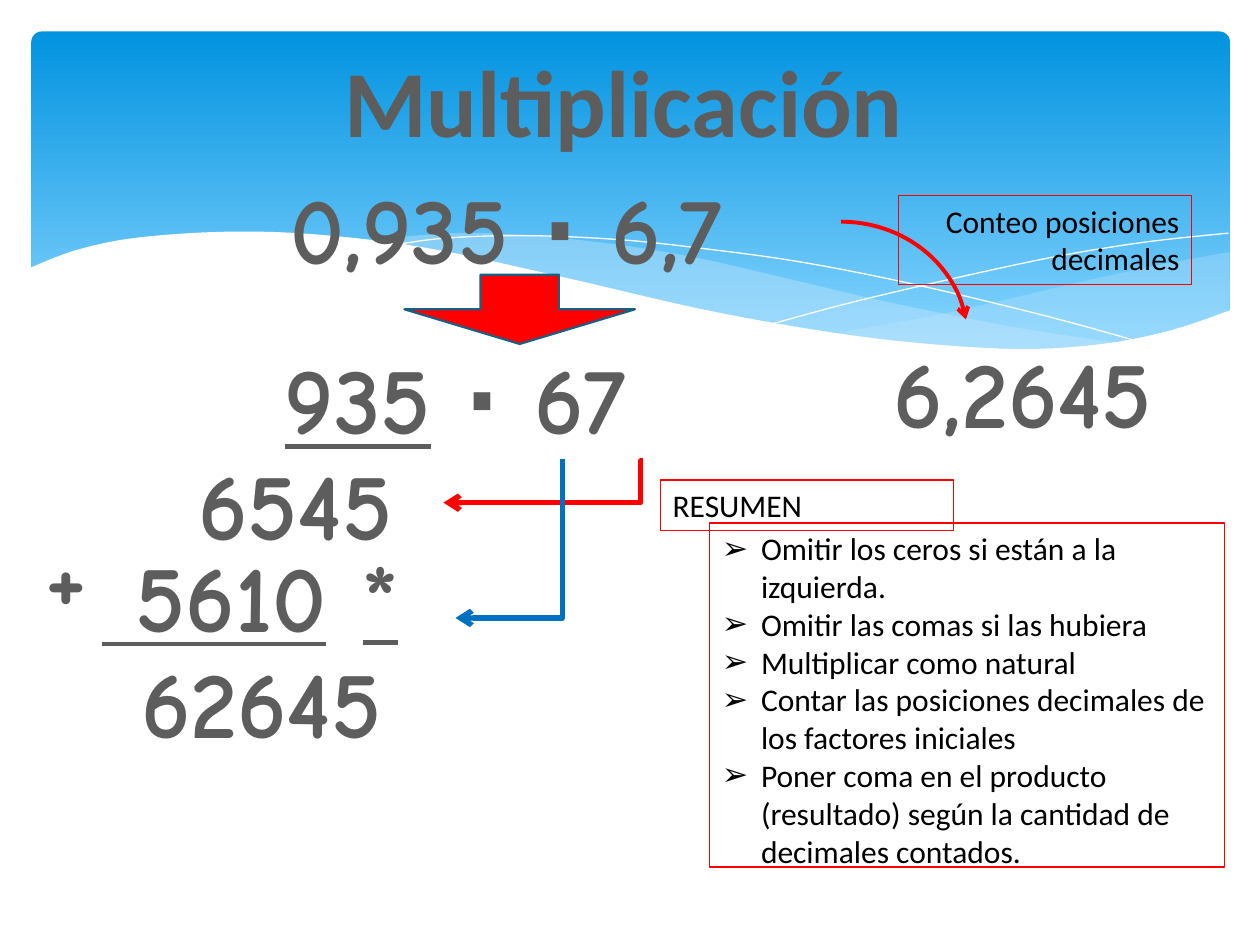
"""Builds a slide that explains how to multiply decimal numbers."""
from lxml.etree import SubElement
from pptx import Presentation
from pptx.dml.color import RGBColor
from pptx.enum.shapes import MSO_CONNECTOR, MSO_SHAPE
from pptx.enum.text import MSO_ANCHOR, MSO_AUTO_SIZE, PP_ALIGN
from pptx.oxml.ns import qn
from pptx.util import Inches, Pt

COLUMNS, ROWS = 100, 75
CELL = Inches(0.1)
COLORS = {
    "sky_top": "0293E0", "sky_bottom": "83D3FE", "mist": "C6E7FC",
    "white": "FFFFFF", "digits": "5D5D5D", "ink": "000000",
    "red": "FF0000", "blue": "0070C0", "arrow_edge": "195F84",
}
LABEL_FONT, DIGIT_FONT = "Calibri", "Comic Neue"

SHORE = [(2.3, 21.3), (5.9, 19.9), (10.6, 18.9), (17.7, 18.4), (25, 18.6),
         (34, 19.7), (44.7, 22), (55.5, 24.5), (64.8, 26.2), (72.6, 27.2),
         (80.9, 27.7), (87.5, 27.3), (93, 26.2), (97.7, 24.6)]
RIGHT_CREST = [(97.6, 20), (92.1, 21), (86.1, 22.3), (75.3, 24.8), (66.1, 26.5)]
RIGHT_TROUGH = [(66.1, 26.5), (73.2, 27.4), (80.3, 27.8), (87.2, 27.4),
                (92.8, 26.3), (97.6, 24.7)]
LONG_CREST = [(89.3, 27.3), (80.7, 26), (70.6, 24), (62.9, 22.2), (55.5, 20.5),
              (48.9, 19.4), (42, 18.7), (36.1, 18.5), (28.6, 19.1)]
LONG_TROUGH = [(28.6, 19.1), (36.2, 20.3), (44.9, 22.2), (56.6, 24.8),
               (65, 26.4), (72.2, 27.4), (79.6, 27.8), (89.3, 27.3)]
FALLING_RIPPLE = [(30.9, 19.5), (35.3, 18.9), (41.6, 18.7), (48.9, 19),
                  (55.6, 19.7), (63.6, 20.8), (72.7, 22.6), (83.1, 25.1),
                  (90.7, 27.2)]
RISING_RIPPLE = [(61.3, 25.7), (67.2, 24.1), (74.8, 22.3), (83.6, 20.4),
                 (91, 19.2), (97.5, 18.5)]

STEPS = [
    "Omitir los ceros si están a la izquierda.",
    "Omitir las comas si las hubiera",
    "Multiplicar como natural",
    "Contar las posiciones decimales de los factores iniciales",
    "Poner coma en el producto (resultado) según la cantidad de decimales contados.",
]
NUMBERS = [
    ((18, 26.5, 36.3), [("935", True), (" ∙ 67", False)]),
    ((5.2, 50.6, 28.4), [(" 62645", False)]),
    ((10.2, 34.9, 23.8), [(" 6545", False)]),
    ((5.1, 42.2, 23.8), [(" 5610", True)]),
    ((27.2, 42.1, 6), [("*", True)]),
    ((2, 40.5, 6.6), [("+", False)]),
    ((16.4, 13, 47.5), [("0,935 ∙ 6,7", False)]),
    ((64, 26, 31.7), [(" 6,2645", False)]),
]


def cells(*counts):
    """Turn counts of grid cells into lengths."""
    return [round(count * CELL) for count in counts]


def color(name):
    """Look up a named colour."""
    return RGBColor.from_string(COLORS[name])


def spline(knots, steps=5):
    """Return points on a smooth curve through the knots."""
    padded = [knots[0], *knots, knots[-1]]
    points = [knots[0]]
    for a, b, c, d in zip(padded, padded[1:], padded[2:], padded[3:]):
        for step in range(1, steps + 1):
            t = step / steps
            points.append(tuple(
                q + t / 2 * (r - p + t * (2 * p - 5 * q + 4 * r - s
                                          + t * (3 * (q - r) + s - p)))
                for p, q, r, s in zip(a, b, c, d)))
    return points


def style_line(item, name, width, arrow=False):
    """Give an outline its colour, its width and perhaps an arrowhead."""
    item.line.color.rgb = color(name)
    item.line.width = Pt(width)
    if arrow:
        outline = item._element.spPr.find(qn("a:ln"))
        SubElement(outline, qn("a:tailEnd"), type="arrow")


def add_curve(shapes, points, fill=None, alpha=100):
    """Draw a filled wave, or a white ripple where no fill is given."""
    builder = shapes.build_freeform(*cells(*points[0]))
    builder.add_line_segments([cells(*point) for point in points[1:]], close=bool(fill))
    wave = builder.convert_to_shape()
    wave.shadow.inherit = False
    if not fill:
        wave.fill.background()
        style_line(wave, "white", 0)
        return
    wave.line.fill.background()
    wave.fill.solid()
    wave.fill.fore_color.rgb = color(fill)
    if alpha < 100:
        tint = wave._element.spPr.find(qn("a:solidFill"))[0]
        SubElement(tint, qn("a:alpha"), val=str(alpha * 1000))


def add_preset(shapes, kind, box, adjustments=()):
    """Add a preset shape without fill or shadow."""
    preset = shapes.add_shape(kind, *cells(*box))
    preset.shadow.inherit = False
    preset.fill.background()
    for index, value in enumerate(adjustments):
        preset.adjustments[index] = value
    return preset


def add_backdrop(shapes):
    """Draw the blue panel and its waves."""
    sky = add_preset(shapes, MSO_SHAPE.ROUNDED_RECTANGLE, (2.5, 2.5, 95.1, 27), [0.03])
    sky.line.fill.background()
    sky.fill.gradient()
    sky.fill.gradient_angle = 270
    for stop, name, position in zip(sky.fill.gradient_stops, ("sky_top", "sky_bottom"), (0, 0.9)):
        stop.color.rgb = color(name)
        stop.position = position
    add_curve(shapes, spline(RIGHT_CREST) + spline(RIGHT_TROUGH), "mist", 29)
    add_curve(shapes, spline(LONG_CREST) + spline(LONG_TROUGH), "mist", 40)
    add_curve(shapes, spline(FALLING_RIPPLE))
    add_curve(shapes, spline(RISING_RIPPLE))
    add_curve(shapes, spline(SHORE) + [(97.7, 32.9), (2.3, 32.9)], "white")


def write(paragraph, text, font, size, name, bold=False, underline=False):
    """Add one formatted run."""
    run = paragraph.add_run()
    run.text = text
    run.font.name, run.font.size = font, Pt(size)
    run.font.bold, run.font.underline = bold, underline
    run.font.color.rgb = color(name)


def set_frame(frame, wrap):
    """Set a top-anchored frame that fits its text."""
    frame.word_wrap = wrap
    frame.auto_size = MSO_AUTO_SIZE.SHAPE_TO_FIT_TEXT
    frame.vertical_anchor = MSO_ANCHOR.TOP


def place(holder, box):
    """Move a placeholder to a box and in front of the backdrop."""
    holder.left, holder.top, holder.width, holder.height = cells(*box)
    holder._element.getparent().append(holder._element)


def add_title(title):
    """Fill in the slide title."""
    place(title, (25.5, 2.9, 49.7, 10.1))
    set_frame(title.text_frame, False)
    heading = title.text_frame.paragraphs[0]
    heading.alignment = PP_ALIGN.CENTER
    write(heading, "Multiplicación ", LABEL_FONT, 54, "digits", bold=True)


def add_steps(body):
    """Fill in the bulleted summary."""
    place(body, (56.3, 41.5, 40.9, 28.3))
    style_line(body, "red", 0.75)
    frame = body.text_frame
    set_frame(frame, True)
    for index, text in enumerate(STEPS):
        step = frame.add_paragraph() if index else frame.paragraphs[0]
        step.space_before = Pt(0)
        indent = cells(3.1)[0]
        properties = step._p.get_or_add_pPr()
        properties.set("marL", str(indent))
        properties.set("indent", str(-indent))
        SubElement(properties, qn("a:buChar"), char="➢")
        write(step, text, LABEL_FONT, 18, "ink")


def add_label(shapes, text, box, alignment):
    """Add a red-framed label."""
    label = add_preset(shapes, MSO_SHAPE.RECTANGLE, box)
    style_line(label, "red", 0.75)
    set_frame(label.text_frame, True)
    caption = label.text_frame.paragraphs[0]
    caption.alignment = alignment
    write(caption, text, LABEL_FONT, 18, "ink")


def add_number(shapes, place_at, parts):
    """Add a large number, some parts of it underlined."""
    frame = shapes.add_textbox(*cells(*place_at, 10.1)).text_frame
    set_frame(frame, False)
    digits = frame.paragraphs[0]
    digits.alignment = PP_ALIGN.CENTER
    for text, underlined in parts:
        write(digits, text, DIGIT_FONT, 54, "digits", True, underlined)


def add_elbow(shapes, ends, name, bend, turn=0):
    """Add a bent arrow; bend is the share of its length before the corner."""
    elbow = shapes.add_connector(MSO_CONNECTOR.ELBOW, *cells(*ends))
    style_line(elbow, name, 3, arrow=True)
    properties = elbow._element.spPr
    SubElement(properties, qn("a:effectLst"))
    properties.find(qn("a:xfrm")).set("rot", str(turn * 60000))
    guides = properties.find(qn("a:prstGeom")).get_or_add_avLst()
    SubElement(guides, qn("a:gd"), name="adj1", fmla=f"val {round(bend * 100000)}")


def main():
    """Build and save the slide."""
    deck = Presentation()
    deck.slide_width, deck.slide_height = cells(COLUMNS, ROWS)
    slide = deck.slides.add_slide(deck.slide_layouts[1])
    shapes = slide.shapes
    title, body = slide.placeholders
    add_backdrop(shapes)
    add_title(title)
    add_steps(body)
    add_label(shapes, "RESUMEN", (52.4, 38.1, 23.3, 4), PP_ALIGN.LEFT)
    add_elbow(shapes, (51, 36.6, 35.2, 39.9), "red", 0.01)
    add_elbow(shapes, (34.1, 38.5, 46.7, 47), "blue", 1, turn=90)
    for place_at, parts in NUMBERS:
        add_number(shapes, place_at, parts)
    down = add_preset(shapes, MSO_SHAPE.DOWN_ARROW, (32.1, 21.8, 18.3, 5.5), [0.34, 0.5])
    down.fill.solid()
    down.fill.fore_color.rgb = color("red")
    style_line(down, "arrow_edge", 1.25)
    sweep = add_preset(shapes, MSO_SHAPE.ARC, (56.7, 17.6, 20.1, 18.6), [162, 210.68])
    style_line(sweep, "red", 2.25, arrow=True)
    add_label(shapes, "Conteo posiciones decimales", (71.3, 15.5, 23.3, 7.1), PP_ALIGN.RIGHT)
    deck.save("out.pptx")


if __name__ == "__main__":
    main()
